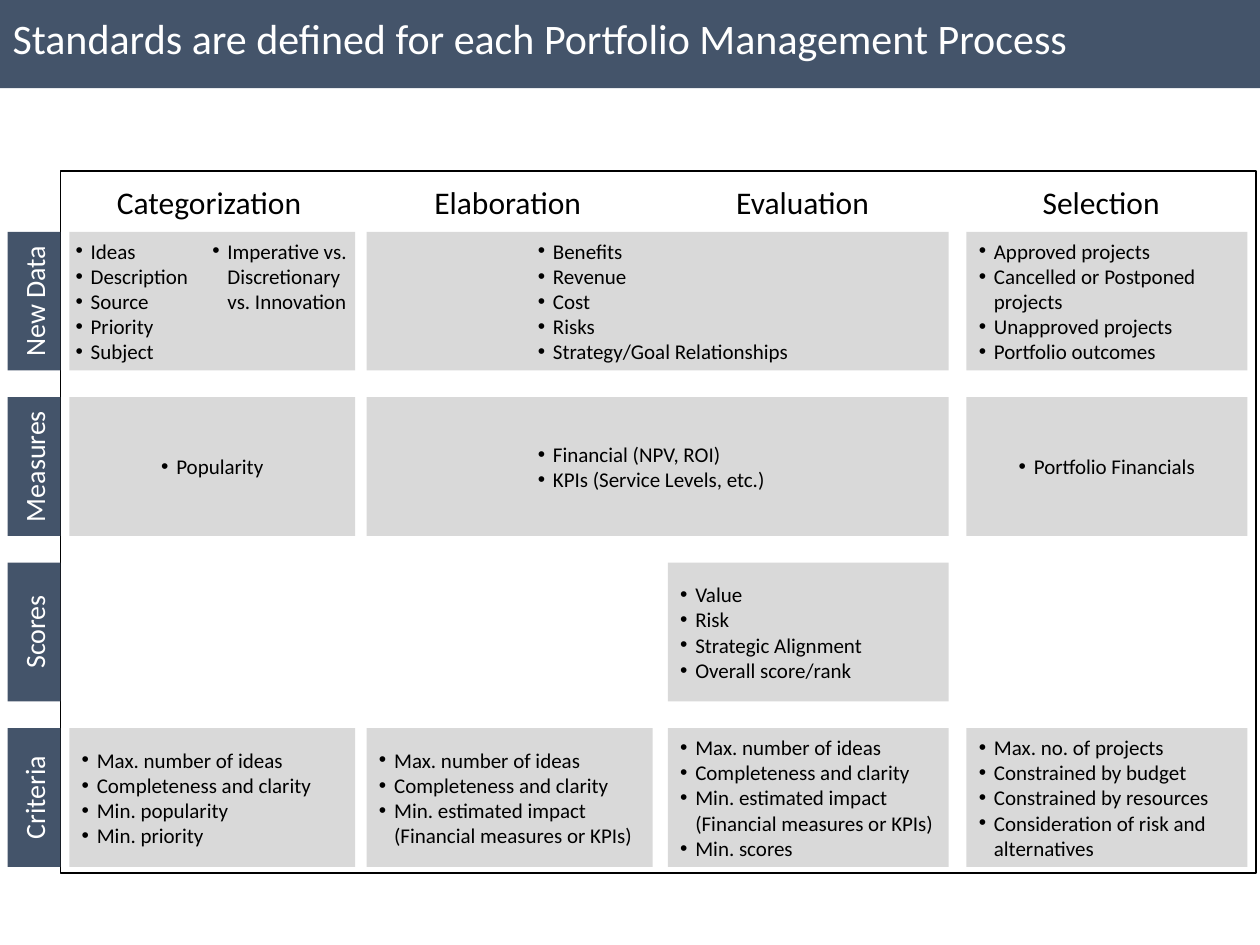
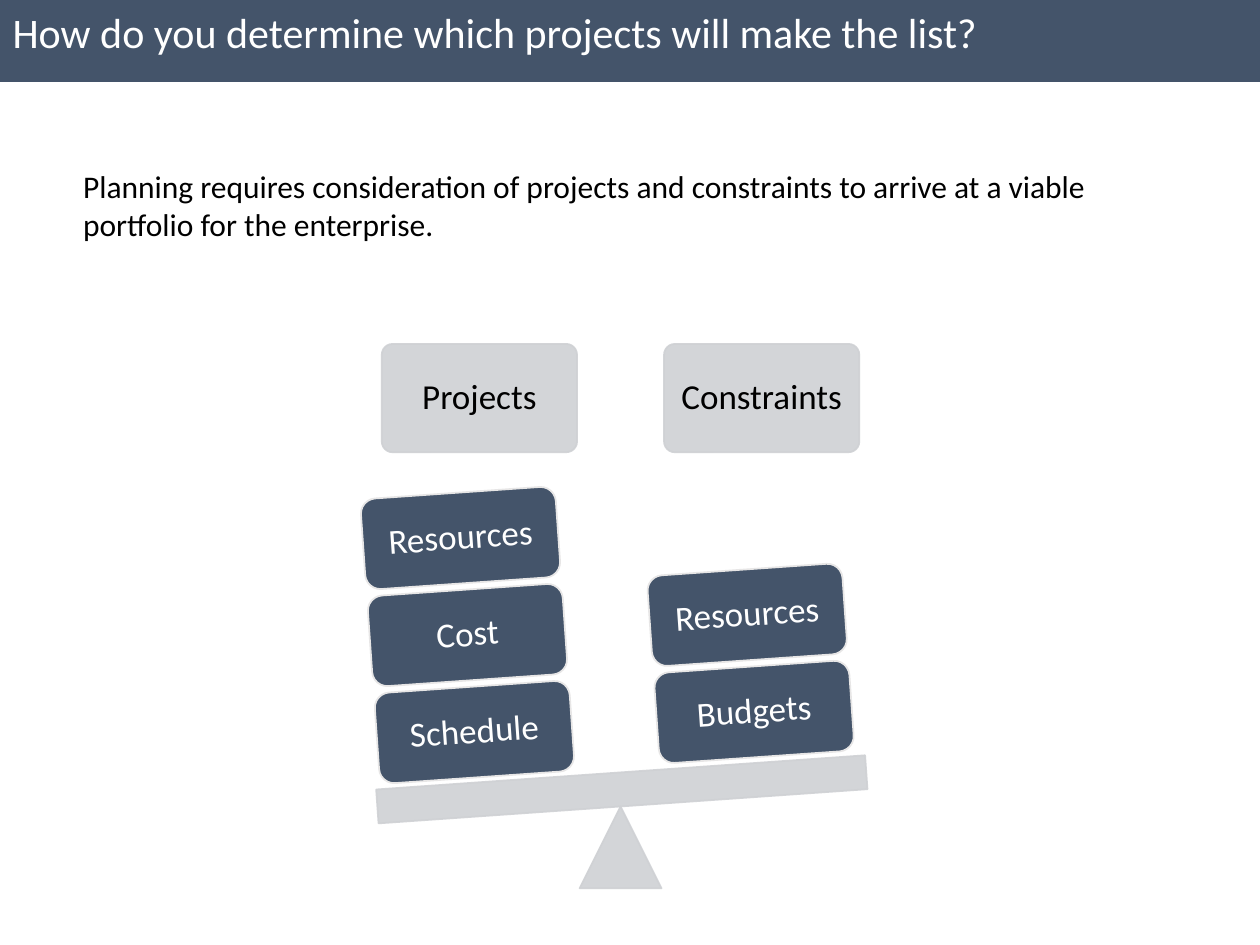
from copy import deepcopy
from dataclasses import dataclass

from pptx import Presentation
from pptx.dml.color import RGBColor
from pptx.enum.shapes import MSO_SHAPE as Shape
from pptx.enum.text import MSO_ANCHOR as Anchor, MSO_AUTO_SIZE as AutoSize, PP_ALIGN as Align
from pptx.oxml.ns import qn
from pptx.util import Inches, Pt
from lxml.etree import SubElement

COLORS = {
    "navy": "44546A",
    "cell": "D9D9D9",
    "scale": "CFD1D4",
    "edge": "E7E6E6",
    "black": "000000",
    "white": "FFFFFF",
}
FONT = "Calibri"
BULLET_INDENT = 0.12


@dataclass
class Box:
    left: float
    top: float
    width: float
    height: float

    def inside(self, left, top, width, height):
        return Box(self.left + left, self.top + top, width, height)

    def lengths(self):
        return [Inches(side) for side in (self.left, self.top, self.width, self.height)]


def rgb(name):
    return RGBColor.from_string(COLORS[name])


def add_bullet(para, indent):
    properties = para._p.get_or_add_pPr()
    properties.set("marL", str(Inches(indent)))
    properties.set("indent", str(-Inches(BULLET_INDENT)))
    SubElement(properties, qn("a:buFont"), typeface="Arial")
    SubElement(properties, qn("a:buChar"), char="•")


def write_text(shape, lines, size=12, color="black", align=Align.LEFT, anchor=Anchor.MIDDLE,
               insets=(0.1, 0.05), wrap=True, bullet_indent=None, line_spacing=None):
    """Fill a shape with one paragraph per line; insets are (sides, top and bottom)."""
    frame = shape.text_frame
    frame.auto_size = AutoSize.NONE
    frame.word_wrap = wrap
    frame.vertical_anchor = anchor
    frame.margin_left = frame.margin_right = Inches(insets[0])
    frame.margin_top = frame.margin_bottom = Inches(insets[1])
    for index, line in enumerate(lines):
        para = frame.add_paragraph() if index else frame.paragraphs[0]
        para.text = line
        para.alignment = align
        if line_spacing:
            para.line_spacing = line_spacing
        if bullet_indent is not None:
            add_bullet(para, bullet_indent)
        for span in para.runs:
            span.font.name = FONT
            span.font.size = Pt(size)
            span.font.color.rgb = rgb(color)
        for line_break in para._p.findall(qn("a:br")):
            line_break.append(deepcopy(para.runs[0]._r.rPr))
    return frame


def set_opacity(fill, percent):
    color = fill._xPr.find(qn("a:solidFill"))[0]
    SubElement(color, qn("a:alpha"), val=str(percent * 1000))


def add_block(page, box, fill=None, line=None, kind=Shape.RECTANGLE, opacity=None, rotation=0):
    shape = page.shapes.add_shape(kind, *box.lengths())
    shape.shadow.inherit = False
    shape.rotation = rotation
    for paint, color in ((shape.fill, fill), (shape.line.fill, line)):
        if color is None:
            paint.background()
            continue
        paint.solid()
        paint.fore_color.rgb = rgb(color)
        if opacity:
            set_opacity(paint, opacity)
    if line:
        shape.line.width = Pt(1)
    return shape


def add_page(deck, title, band):
    """Add a title-only slide whose title is the dark band across the top."""
    page = deck.slides.add_slide(deck.slide_layouts[5])
    placeholder = page.shapes.title
    placeholder.left, placeholder.top, placeholder.width, placeholder.height = band.lengths()
    placeholder.fill.solid()
    placeholder.fill.fore_color.rgb = rgb("navy")
    write_text(placeholder, [title], size=24, color="white", anchor=Anchor.TOP, insets=(0.1, 0.1))
    return page


# Standards matrix: lefts are relative to the frame
ROWS = ["New Data", "Measures", "Scores", "Criteria"]
ROW_TOP, ROW_HEIGHT, ROW_PITCH = 0.48, 1.1, 3.94 / 3
# heading, heading left, column left, column width
COLUMNS = [
    ("Categorization", 0.55, 0.07, 2.27),
    ("Elaboration", 2.92, 2.43, 2.27),
    ("Evaluation", 5.26, 4.82, 2.23),
    ("Selection", 7.63, 7.19, 2.23),
]
IMPACT = "Min. estimated impact\n(Financial measures or KPIs)"
COMMON = ["Max. number of ideas", "Completeness and clarity"]
TIGHT = {"insets": (0.05, 0.05)}
TIGHT_CENTERED = {**TIGHT, "align": Align.CENTER}
WIDE = {"bullet_indent": 1.38}
# row, first column, last column, bullets, text format
CELLS = [
    (0, 0, 0, ["Ideas", "Description", "Source", "Priority", "Subject",
               "Imperative vs. Discretionary vs. Innovation"], TIGHT),
    (0, 1, 2, ["Benefits", "Revenue", "Cost", "Risks", "Strategy/Goal Relationships"], WIDE),
    (0, 3, 3, ["Approved projects", "Cancelled or Postponed projects",
               "Unapproved projects", "Portfolio outcomes"], {}),
    (1, 0, 0, ["Popularity"], TIGHT_CENTERED),
    (1, 1, 2, ["Financial (NPV, ROI)", "KPIs (Service Levels, etc.)"], WIDE),
    (1, 3, 3, ["Portfolio Financials"], TIGHT_CENTERED),
    (2, 2, 2, ["Value", "Risk", "Strategic Alignment", "Overall score/rank"], {}),
    (3, 0, 0, COMMON + ["Min. popularity", "Min. priority"], {}),
    (3, 1, 1, COMMON + [IMPACT], {}),
    (3, 2, 2, COMMON + [IMPACT, "Min. scores"], {}),
    (3, 3, 3, ["Max. no. of projects", "Constrained by budget", "Constrained by resources",
               "Consideration of risk and alternatives"], {}),
]


def row_top(row):
    return ROW_TOP + row * ROW_PITCH


def add_headings(page, box):
    add_block(page, box, line="black")
    for row, label in enumerate(ROWS):
        tab = add_block(page, box.inside(-0.42, row_top(row), 0.42, ROW_HEIGHT), fill="navy")
        frame = write_text(tab, [label], size=16, color="white", align=Align.CENTER)
        frame._txBody.bodyPr.set("vert", "vert270")
    for heading, left, _, _ in COLUMNS:
        label = page.shapes.add_textbox(*box.inside(left, 0, 1.26, ROW_TOP).lengths())
        write_text(label, [heading], size=18, align=Align.CENTER, wrap=False)


def add_cells(page, box):
    for row, first, last, bullets, text_format in CELLS:
        left = COLUMNS[first][2]
        width = COLUMNS[last][2] + COLUMNS[last][3] - left
        cell = add_block(page, box.inside(left, row_top(row), width, ROW_HEIGHT), fill="cell")
        frame = write_text(cell, bullets, **{"bullet_indent": BULLET_INDENT, **text_format})
        if (row, first) == (0, 0):
            frame._txBody.bodyPr.set("numCol", "2")


def add_standards_page(deck):
    page = add_page(deck, "Standards are defined for each Portfolio Management Process",
                    Box(0, 0, 10, 0.7))
    matrix = Box(0.48, 1.36, 9.49, 5.57)
    add_headings(page, matrix)
    add_cells(page, matrix)


TILT = 356
STACK_STEP = (-0.055, -0.77)
SCALE_TEXT = {"size": 20, "align": Align.CENTER, "insets": (0.08, 0.08), "line_spacing": 0.9}
# heading, heading left, left and top of the lowest weight, weights from the bottom up
SIDES = [
    ("Projects", 0.15, 0.11, 2.72, ["Schedule", "Cost", "Resources"]),
    ("Constraints", 2.39, 2.33, 2.56, ["Budgets", "Resources"]),
]


def add_balance(page, box):
    """Draw a tilted scale with stacked weights under two headings."""
    pale = {"fill": "scale", "line": "scale", "opacity": 90}
    add_block(page, box.inside(1.72, 3.67, 0.65, 0.65), kind=Shape.ISOSCELES_TRIANGLE, **pale)
    add_block(page, box.inside(0.11, 3.4, 3.89, 0.27), rotation=TILT, **pale)
    for heading, heading_left, left, top, weights in SIDES:
        label = add_block(page, box.inside(heading_left, 0, 1.55, 0.86),
                          kind=Shape.ROUNDED_RECTANGLE, **pale)
        label.adjustments[0] = 0.1
        write_text(label, [heading], **SCALE_TEXT)
        for level, name in enumerate(weights):
            place = box.inside(left + level * STACK_STEP[0], top + level * STACK_STEP[1],
                               1.55, 0.72)
            weight = add_block(page, place, fill="navy", line="edge",
                               kind=Shape.ROUNDED_RECTANGLE, rotation=TILT)
            write_text(weight, [name], color="white", **SCALE_TEXT)


def add_balance_page(deck):
    page = add_page(deck, "How do you determine which projects will make the list?",
                    Box(0, -0.05, 10, 0.7))
    add_balance(page, Box(2.88, 2.73, 4, 4.32))
    intro = page.shapes.add_textbox(*Box(0.06, 1.28, 9.43, 0.71).lengths())
    frame = write_text(intro, ["Planning requires consideration of projects and constraints "
                               "to arrive at a viable portfolio for the enterprise."],
                       size=18, anchor=Anchor.TOP)
    frame.margin_left = Inches(0.6)


def main():
    deck = Presentation()
    deck.slide_width, deck.slide_height = Inches(10), Inches(7.5)
    add_standards_page(deck)
    add_balance_page(deck)
    deck.save("out.pptx")


if __name__ == "__main__":
    main()
